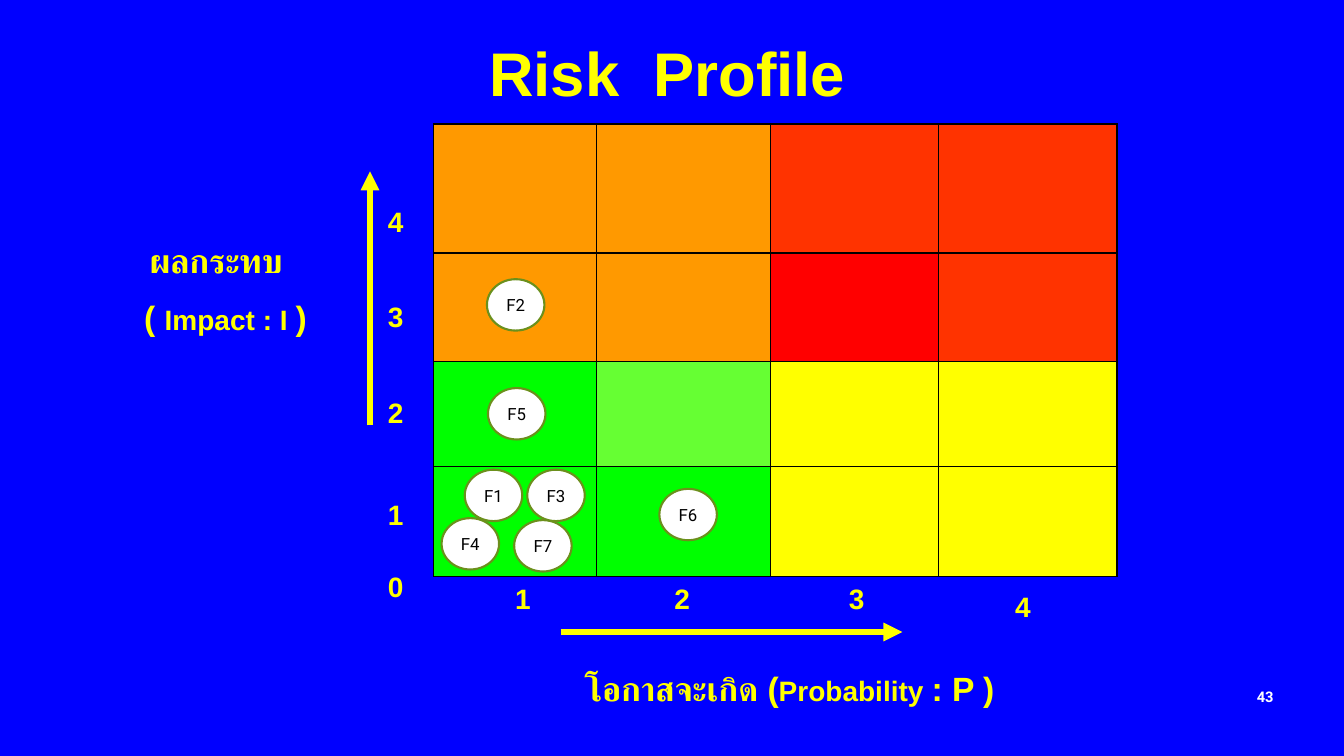
import pptx
import pptx.dml.color
import pptx.enum.shapes
import pptx.enum.text
import pptx.oxml
import pptx.oxml.ns
import pptx.util
from pptx.util import Inches

# Content
TITLE = "Risk  Profile"
PAGE_NUMBER = "43"
# Each paragraph is a list of (text, size name) runs
IMPACT_CAPTION = [
    [("ผลกระทบ ", "caption")],
    [(" ( ", "caption"), ("Impact : I ", "label"), (")", "caption")],
]
PROBABILITY_CAPTION = [
    [("โอกาสจะเกิด (", "caption"), ("Probability ", "label"), (": P )", "caption")],
]
RISK_LEVELS = [
    ["orange", "orange", "high", "high"],
    ["orange", "orange", "extreme", "high"],
    ["low", "light", "yellow", "yellow"],
    ["low", "low", "yellow", "yellow"],
]
IMPACT_SCALE = [("4", 1.98), ("3", 2.92), ("2", 3.87), ("1", 4.89), ("0", 5.6)]
PROBABILITY_SCALE = [("1", 5.01, 5.72), ("2", 6.59, 5.72), ("3", 8.32, 5.72), ("4", 9.97, 5.8)]
RISK_FACTORS = [
    ("F7", 5.1, 5.16), ("F4", 4.38, 5.14), ("F6", 6.54, 4.85), ("F3", 5.23, 4.66),
    ("F1", 4.61, 4.66), ("F5", 4.84, 3.85), ("F2", 4.83, 2.77),
]
ARROWS = [(3.67, 4.22, 3.67, 1.7), (5.56, 6.27, 8.95, 6.27)]

# Layout in inches
COLUMN_WIDTHS = [1.62, 1.72, 1.67, 1.77]
ROW_HEIGHTS = [1.28, 1.08, 1.04, 1.09]
MATRIX_LEFT, MATRIX_TOP = 4.3, 1.23
IMPACT_SCALE_LEFT = 3.75
LABEL_SIZE = (0.47, 0.43)
FACTOR_SIZE = (0.57, 0.51)

THEME = {
    "colors": {
        "background": "0000FF", "yellow": "FFFF00", "white": "FFFFFF", "black": "000000",
        "orange": "FF9900", "high": "FF3300", "extreme": "FF0000",
        "low": "00FF00", "light": "66FF33", "outline": "6B901C",
    },
    "sizes": {"title": 44, "caption": 24, "label": 20, "factor": 12, "page": 10.5},
    "fonts": {"main": "Arial", "small": "Roboto"},
}

ALIGN = pptx.enum.text.PP_ALIGN
ANCHOR = pptx.enum.text.MSO_ANCHOR


def color(name):
    return pptx.dml.color.RGBColor.from_string(THEME["colors"][name])


def write_text(frame, paragraphs, font="main", ink="yellow", bold=True, align=ALIGN.LEFT,
               anchor=ANCHOR.TOP, space_between=0, margins=(0.1, 0.05, 0.1, 0.05)):
    frame.word_wrap = True
    frame.vertical_anchor = anchor
    (frame.margin_left, frame.margin_top,
     frame.margin_right, frame.margin_bottom) = [Inches(margin) for margin in margins]
    for index, runs in enumerate(paragraphs):
        paragraph = frame.add_paragraph() if index else frame.paragraphs[0]
        paragraph.alignment = align
        if index:
            paragraph.space_before = pptx.util.Pt(space_between)
        for text, size in runs:
            run = paragraph.add_run()
            run.text = text
            run.font.name = THEME["fonts"][font]
            run.font.size = pptx.util.Pt(THEME["sizes"][size])
            run.font.bold = bold
            run.font.color.rgb = color(ink)


def add_text(slide, box, paragraphs, **text_format):
    shape = slide.shapes.add_textbox(*[Inches(value) for value in box])
    write_text(shape.text_frame, paragraphs, **text_format)


def add_arrow(slide, points):
    arrow = slide.shapes.add_connector(
        pptx.enum.shapes.MSO_CONNECTOR.STRAIGHT, *[Inches(value) for value in points])
    arrow.line.color.rgb = color("yellow")
    arrow.line.width = pptx.util.Pt(4.5)
    line = arrow.line._get_or_add_ln()
    line.append(pptx.oxml.parse_xml(
        f'<a:tailEnd {pptx.oxml.ns.nsdecls("a")} type="triangle"/>'))
    arrow._element.spPr.append(pptx.oxml.parse_xml(
        f'<a:effectLst {pptx.oxml.ns.nsdecls("a")}/>'))


def fill_cell(cell, fill_name):
    properties = cell._tc.get_or_add_tcPr()
    for side in ("lnL", "lnR", "lnT", "lnB"):
        properties.append(pptx.oxml.parse_xml(
            f'<a:{side} {pptx.oxml.ns.nsdecls("a")} w="12700"><a:solidFill>'
            f'<a:srgbClr val="{THEME["colors"]["black"]}"/></a:solidFill></a:{side}>'))
    cell.fill.solid()
    cell.fill.fore_color.rgb = color(fill_name)


def add_matrix(slide):
    box = (MATRIX_LEFT, MATRIX_TOP, sum(COLUMN_WIDTHS), sum(ROW_HEIGHTS))
    table = slide.shapes.add_table(
        len(ROW_HEIGHTS), len(COLUMN_WIDTHS), *[Inches(value) for value in box]).table
    table.first_row = False
    table.horz_banding = False
    for column, width in zip(table.columns, COLUMN_WIDTHS):
        column.width = Inches(width)
    for row, height, levels in zip(table.rows, ROW_HEIGHTS, RISK_LEVELS):
        row.height = Inches(height)
        for cell, level in zip(row.cells, levels):
            fill_cell(cell, level)


def add_factor(slide, name, left, top):
    shape = slide.shapes.add_shape(
        pptx.enum.shapes.MSO_SHAPE.OVAL,
        *[Inches(value) for value in (left, top, *FACTOR_SIZE)])
    shape.shadow.inherit = False
    shape.fill.solid()
    shape.fill.fore_color.rgb = color("white")
    shape.line.color.rgb = color("outline")
    shape.line.width = pptx.util.Pt(1.5)
    write_text(shape.text_frame, [[(name, "factor")]], font="small", ink="black", bold=False,
               align=ALIGN.CENTER, anchor=ANCHOR.MIDDLE, margins=(0, 0, 0, 0))


def main():
    presentation = pptx.Presentation()
    presentation.slide_width = Inches(13.33)
    presentation.slide_height = Inches(7.5)
    slide = presentation.slides.add_slide(presentation.slide_layouts[6])
    slide.background.fill.solid()
    slide.background.fill.fore_color.rgb = color("background")

    # Page number, axes and risk matrix
    add_text(slide, (11.98, 6.71, 0.75, 0.4), [[(PAGE_NUMBER, "page")]], font="small",
             ink="white", align=ALIGN.RIGHT, anchor=ANCHOR.MIDDLE)
    for points in ARROWS:
        add_arrow(slide, points)
    add_matrix(slide)

    # Title and axis captions
    add_text(slide, (3.75, 6.31, 7.16, 0.77), PROBABILITY_CAPTION, align=ALIGN.CENTER,
             anchor=ANCHOR.BOTTOM, margins=(1.1, 0.05, 0.1, 0.05))
    add_text(slide, (2.33, 0.3, 8.58, 0.84), [[(TITLE, "title")]], align=ALIGN.CENTER)
    add_text(slide, (1.05, 2.33, 2.28, 1.11), IMPACT_CAPTION, align=ALIGN.CENTER,
             space_between=12)

    # Scale labels
    impact_labels = [(text, IMPACT_SCALE_LEFT, top) for text, top in IMPACT_SCALE]
    for text, left, top in impact_labels + PROBABILITY_SCALE:
        add_text(slide, (left, top, *LABEL_SIZE), [[(text, "label")]])

    # Risk factors
    for name, left, top in RISK_FACTORS:
        add_factor(slide, name, left, top)

    presentation.save("out.pptx")


if __name__ == "__main__":
    main()
